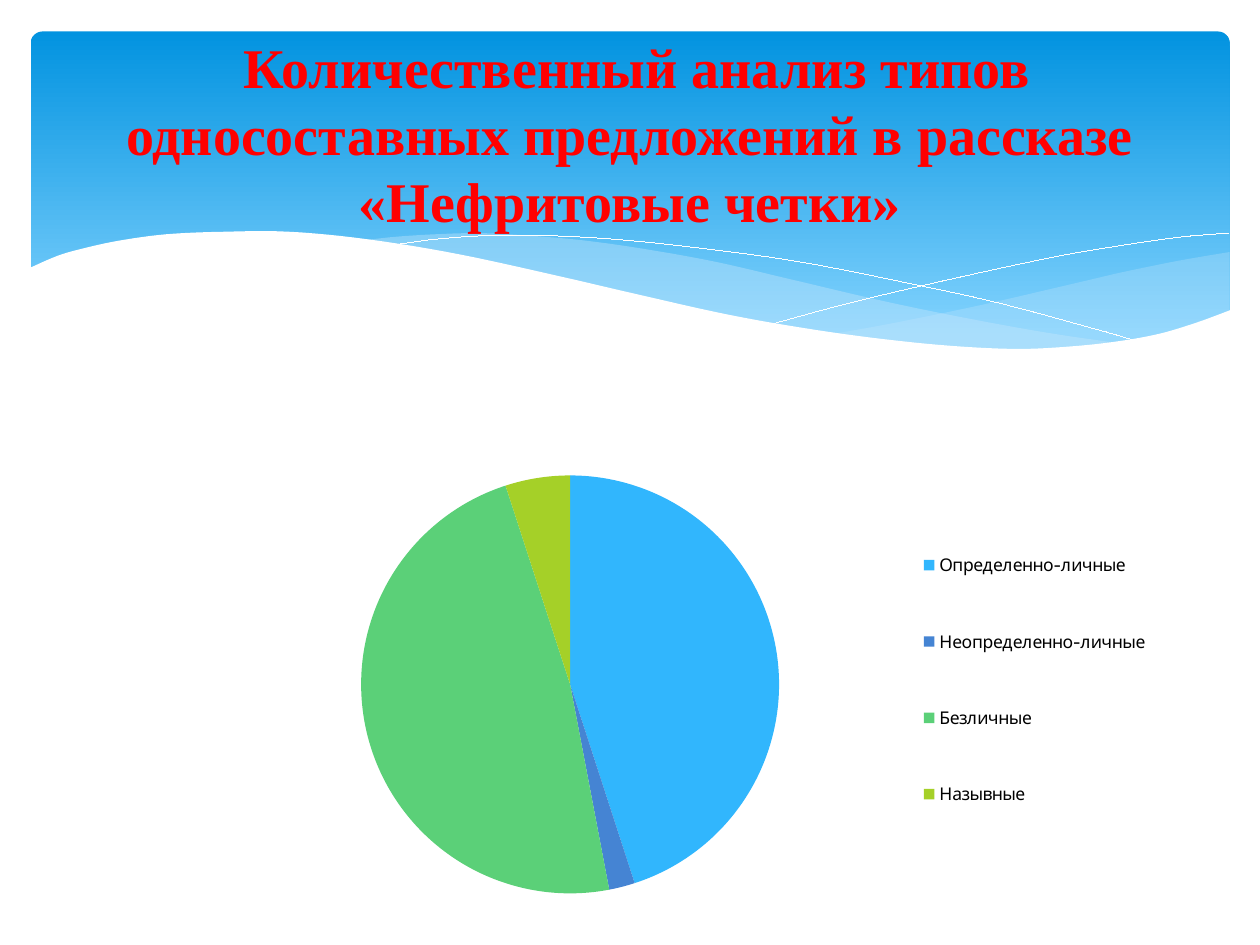
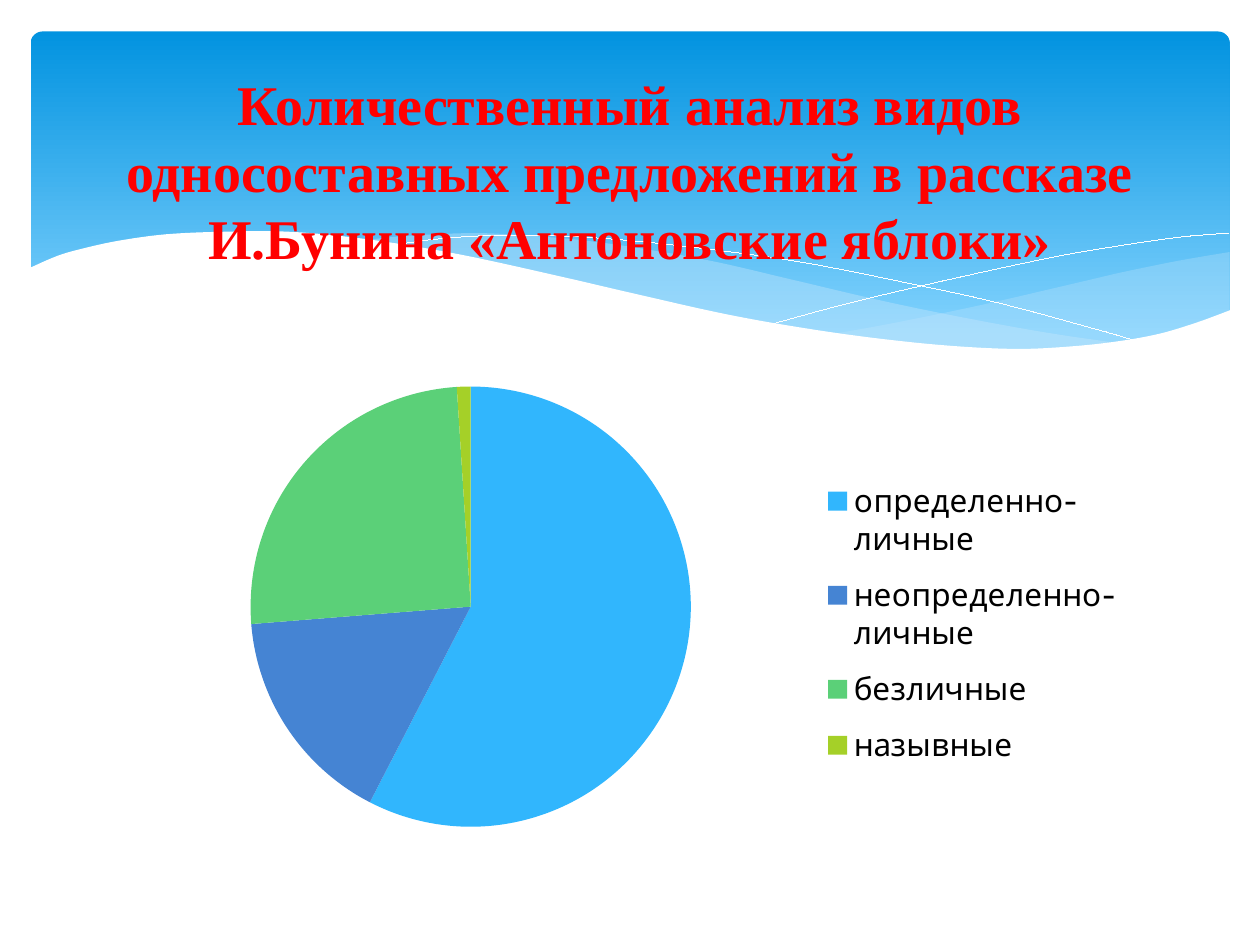
"""Two slides that compare one-part sentence types in two stories with pie charts."""
from dataclasses import dataclass
from typing import Optional

from lxml import etree
from pptx import Presentation, util as u
from pptx.chart.data import CategoryChartData
from pptx.dml.color import RGBColor
from pptx.enum import chart as ch, shapes, text
from pptx.oxml import ns

WIDTH, HEIGHT = u.Inches(10), u.Inches(7.5)
COLUMNS, ROWS = 100, 75
WHITE, VEIL, RED, BLACK = "FFFFFF", "C6E7FC", "FF0000", "000000"
BAND_STOPS = ((0, "0293E0"), (0.9, "83D3FE"))
SLICE_COLORS = ("31B6FD", "4584D3", "5BD078", "A5D028")
TITLE_FONT, CHART_FONT = "Times New Roman", "Cabin"
HAIRLINE = u.Emu(1)

Knots = tuple[tuple[float, float], ...]


@dataclass(frozen=True)
class Box:
    """A rectangle in grid columns and rows."""
    left: float
    top: float
    width: float
    height: float

    def emu(self) -> tuple[int, int, int, int]:
        """Return left, top, width and height as lengths."""
        return col(self.left), row(self.top), col(self.width), row(self.height)


@dataclass(frozen=True)
class Wave:
    """An outline of smooth curves: filled if it has a fill, else a hairline."""
    curves: tuple[Knots, ...]
    fill: Optional[str] = None
    alpha: int = 100


@dataclass(frozen=True)
class PieSlide:
    """Title and chart of one slide; layouts are shares of the chart's size."""
    title: str
    title_box: Box
    chart_box: Box
    categories: tuple[str, ...]
    values: tuple[int, ...]
    size: int
    legend: Box
    plot: Optional[Box] = None


BAND = Box(2.45, 2.5, 95.15, 27)
WAVES = (
    Wave((
        ((97.6, 20), (93.5, 20.7), (89.1, 21.6), (86.1, 22.3), (77.9, 24.2),
         (70.6, 25.7), (66.1, 26.5)),
        ((66.1, 26.5), (71.9, 27.2), (76.9, 27.7), (81.4, 27.8), (85.4, 27.6),
         (89.7, 27), (93.5, 26.2), (97.6, 24.7)),
    ), VEIL, 29),
    Wave((
        ((89.3, 27.3), (83.7, 26.5), (77.5, 25.4), (70.6, 24), (62.9, 22.2),
         (56.9, 20.8), (51.4, 19.8), (46.5, 19.1), (42, 18.7), (38, 18.5),
         (34.4, 18.6), (31.3, 18.8), (28.6, 19.1)),
        ((28.6, 19.1), (34.2, 19.9), (40.4, 21.1), (44.9, 22.2), (53, 24),
         (60.1, 25.5), (66.5, 26.6), (72.2, 27.4), (77.3, 27.7), (81.8, 27.8),
         (85.7, 27.7), (89.3, 27.3)),
    ), VEIL, 40),
    Wave((
        ((30.9, 19.5), (34.4, 19), (38.7, 18.7), (43.3, 18.7), (48.9, 19),
         (55.6, 19.7), (63.6, 20.8), (72.7, 22.6), (79.5, 24.1), (86.9, 26.1),
         (90.7, 27.2)),
    )),
    Wave((
        ((61.3, 25.7), (67.2, 24.1), (74.8, 22.3), (83.6, 20.4), (89.5, 19.4),
         (93.8, 18.8), (97.5, 18.5)),
    )),
    Wave((
        ((97.7, 24.6), (95, 25.6), (92, 26.5), (88.7, 27.1), (85, 27.5),
         (80.9, 27.7), (76.1, 27.5), (70.8, 27), (64.8, 26.2), (57.9, 25),
         (50.3, 23.3), (44.7, 22), (36.5, 20.2), (29.2, 19), (23, 18.4),
         (17.7, 18.4), (13.2, 18.6), (9.5, 19.1), (6.7, 19.7), (4.6, 20.3),
         (2.3, 21.3)),
        ((2.3, 32.9), (97.7, 32.9)),
    ), WHITE),
)

PIE_SLIDES = (
    PieSlide(
        " Количественный анализ типов односоставных предложений "
        "в рассказе «Нефритовые четки»",
        Box(5, 3.7, 90, 13.7), Box(16.9, 35.1, 81, 37.7),
        ("Определенно-личные", "Неопределенно-личные", "Безличные", "Назывные"),
        (45, 2, 48, 5), 10,
        legend=Box(0.66, 0.12, 0.29, 0.76), plot=Box(0.03, 0.07, 0.64, 0.88),
    ),
    PieSlide(
        "Количественный анализ видов односоставных предложений "
        "в рассказе И.Бунина «Антоновские яблоки»",
        Box(5, 3.7, 90, 19.6), Box(9.5, 29.3, 81, 37.7),
        ("определенно-личные", "неопределенно-личные", "безличные", "назывные"),
        (57, 16, 25, 1), 18,
        legend=Box(0.68, 0.2, 0.31, 0.67),
    ),
)


def col(n: float) -> int:
    """Convert grid columns to a length."""
    return round(WIDTH * n / COLUMNS)


def row(n: float) -> int:
    """Convert grid rows to a length."""
    return round(HEIGHT * n / ROWS)


def rgb(value: str) -> RGBColor:
    """Turn a hex string into a colour."""
    return RGBColor.from_string(value)


def smooth(knots: Knots, steps: int = 6) -> list[tuple[float, float]]:
    """Sample a Catmull-Rom curve that passes through the knots."""
    ends = (knots[0], *knots, knots[-1])
    points = [knots[0]]
    for a, b, c, d in zip(ends, ends[1:], ends[2:], ends[3:]):
        for i in range(1, steps + 1):
            t = i / steps
            points.append(tuple(
                0.5 * (2 * q + (v - p) * t + (2 * p - 5 * q + 4 * v - w) * t ** 2
                       + (3 * q - p - 3 * v + w) * t ** 3)
                for p, q, v, w in zip(a, b, c, d)))
    return points


def add_band(s) -> None:
    """Draw the gradient band behind the title."""
    sp = s.shapes.add_shape(shapes.MSO_SHAPE.ROUNDED_RECTANGLE, *BAND.emu())
    sp.adjustments[0] = 0.034
    sp.shadow.inherit = False
    sp.line.fill.background()
    sp.fill.gradient()
    sp.fill.gradient_angle = 270
    for stop, (position, color) in zip(sp.fill.gradient_stops, BAND_STOPS):
        stop.position = position
        stop.color.rgb = rgb(color)


def add_wave(s, wave: Wave) -> None:
    """Draw one wave of the band's lower edge."""
    points = [(col(x), row(y)) for knots in wave.curves for x, y in smooth(knots)]
    builder = s.shapes.build_freeform(*points[0])
    builder.add_line_segments(points[1:], close=wave.fill is not None)
    sp = builder.convert_to_shape()
    sp.shadow.inherit = False
    if wave.fill is None:
        sp.fill.background()
        sp.line.color.rgb = rgb(WHITE)
        sp.line.width = HAIRLINE
        return
    sp.line.fill.background()
    sp.fill.solid()
    sp.fill.fore_color.rgb = rgb(wave.fill)
    if wave.alpha < 100:
        color = sp.fill._xPr.find(".//" + ns.qn("a:srgbClr"))
        etree.SubElement(color, ns.qn("a:alpha"), val=str(wave.alpha * 1000))


def add_title(s, title: str, box: Box) -> None:
    """Write the centred title."""
    tf = s.shapes.add_textbox(*box.emu()).text_frame
    tf.word_wrap = True
    tf.vertical_anchor = text.MSO_ANCHOR.MIDDLE
    p = tf.paragraphs[0]
    p.text = title
    p.alignment = text.PP_ALIGN.CENTER
    p.font.name, p.font.size, p.font.bold = TITLE_FONT, u.Pt(32), True
    p.font.color.rgb = rgb(RED)


def set_layout(parent, index: int, box: Box, inner: bool = False) -> None:
    """Give a chart part a fixed place, replacing any automatic one."""
    for old in parent.findall(ns.qn("c:layout")):
        parent.remove(old)
    layout = etree.Element(ns.qn("c:layout"))
    manual = etree.SubElement(layout, ns.qn("c:manualLayout"))
    settings = [("layoutTarget", "inner")] if inner else []
    settings += [("xMode", "edge"), ("yMode", "edge"), ("x", box.left),
                 ("y", box.top), ("w", box.width), ("h", box.height)]
    for name, value in settings:
        etree.SubElement(manual, ns.qn(f"c:{name}"), val=str(value))
    parent.insert(index, layout)


def add_pie(s, pie: PieSlide) -> None:
    """Draw the pie chart with its legend."""
    data = CategoryChartData()
    data.categories = pie.categories
    data.add_series("Series 1", pie.values)
    chart = s.shapes.add_chart(
        ch.XL_CHART_TYPE.PIE, *pie.chart_box.emu(), data).chart
    chart.has_title = False
    chart.font.name, chart.font.size = CHART_FONT, u.Pt(pie.size)
    chart.font.color.rgb = rgb(BLACK)
    chart.has_legend = True
    chart.legend.position = ch.XL_LEGEND_POSITION.RIGHT
    chart.legend.include_in_layout = False
    plot = chart.plots[0]
    plot.vary_by_categories = True
    for i, color in enumerate(SLICE_COLORS):
        fill = plot.series[0].points[i].format.fill
        fill.solid()
        fill.fore_color.rgb = rgb(color)
    if pie.plot:
        set_layout(chart._chartSpace.chart.plotArea, 0, pie.plot, inner=True)
    set_layout(chart.legend._element, 1, pie.legend)


def main() -> None:
    """Build and save the presentation."""
    prs = Presentation()
    prs.slide_width, prs.slide_height = WIDTH, HEIGHT
    for pie in PIE_SLIDES:
        s = prs.slides.add_slide(prs.slide_layouts[6])
        add_band(s)
        for wave in WAVES:
            add_wave(s, wave)
        add_title(s, pie.title, pie.title_box)
        add_pie(s, pie)
    prs.save("out.pptx")


if __name__ == "__main__":
    main()
